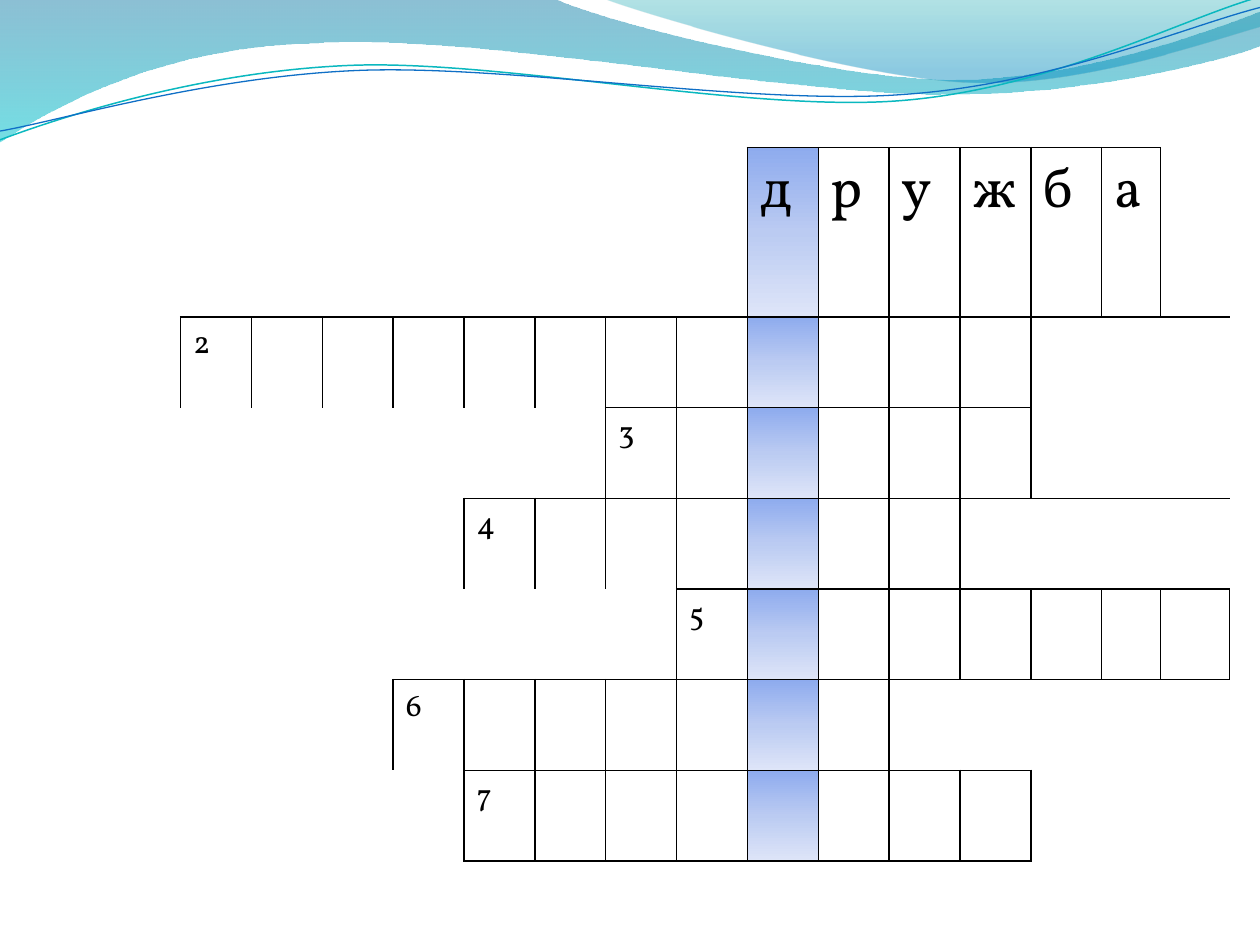
import math
from dataclasses import dataclass
from typing import Any

import lxml.etree
import pptx
import pptx.dml.color
import pptx.oxml
import pptx.oxml.ns
import pptx.util

COLORS = {
    "black": "000000", "teal": "0AB8BF", "blue": "0F6FC6",
    "key_top": "8EABEE", "key_mid": "BBCBF2", "key_bottom": "DEE5F8",
    "wave_top": "0074A1", "wave_bottom": "00C6CF",
    "crest_top": "00A1A9", "crest_bottom": "008BBF",
}
FONT = "Vollkorn"
LINE_FACTOR = 1.395
NO_GRID_STYLE = "{2D5ABB26-0587-4C30-8999-92F81FD0307C}"
KEY_COL = 9
COL_WIDTHS = [80.7] + [40.5] * 13 + [33.6, 39.6]
LAST_COL = len(COL_WIDTHS) - 1
ROW_HEIGHT = 50.6
CELL_TOP = 3.6

Point = tuple[float, float]
qn = pptx.oxml.ns.qn


@dataclass
class Stop:
    position: int
    color: str
    alpha: int = 100


@dataclass
class Word:
    first: int
    last: int
    text: str
    size: int = 18
    full_height: float = 51.85
    line_above_right: bool = False
    right_rows: int = 1


@dataclass
class Wave:
    """An outline whose pieces are lines (one point) or Bezier curves (three)."""
    start: Point
    pieces: list[tuple[Point, ...]]
    stops: tuple[Stop, ...] = ()
    line: str = ""
    width: float = 0
    pivot: Point = (0, 0)
    rotation: float = 0


KEY_STOPS = (Stop(0, "key_top"), Stop(50, "key_mid"), Stop(100, "key_bottom"))

WORDS = [
    Word(9, 14, "дружба", 32, 96.6),
    Word(1, 12, "2", line_above_right=True, right_rows=2),
    Word(7, 12, "3", right_rows=0),
    Word(5, 11, "4", line_above_right=True),
    Word(8, 15, "5"),
    Word(4, 10, "6", line_above_right=True),
    Word(5, 12, "7"),
]

WAVES = [
    Wave((0, 0),
         [((316.8, -0.7),),
          ((342.7, 12.2), (478.1, 45.4), (545.8, 45.4)),
          ((614.2, 45.4), (689.8, 18.7), (720, 6.5)),
          ((720.7, 25.9),),
          ((707.8, 31.7), (626.4, 54.7), (537.1, 54)),
          ((447.8, 54), (275, 20.2), (185, 24.5)),
          ((92.9, 25.9), (33.1, 59.8), (-0.7, 81.4))],
         (Stop(0, "wave_top", 45), Stop(100, "wave_bottom", 55))),
    Wave((344.9, -0.7),
         [((366.5, 7.9), (491, 44.6), (553.7, 46.8)),
          ((616.3, 49.7), (691.9, 23), (720, 15.1)),
          ((720, 0),)],
         (Stop(0, "crest_top", 30), Stop(80, "crest_bottom", 45))),
    Wave((0, 79.9),
         [((34.6, 67), (113.8, 41), (199.4, 37.4)),
          ((284.4, 33.8), (427, 64.1), (513.4, 57.6)),
          ((599.8, 51.1), (675.4, 10.8), (718.6, -1.4))],
         line="teal", width=0.85, pivot=(359.3, 41.4), rotation=-2.7),
    Wave((0, 74.9),
         [((33.8, 69.1), (118.1, 43.9), (203.8, 40.3)),
          ((290.2, 36.7), (429.8, 60.5), (516.2, 54)),
          ((601.9, 48.2), (677.5, 15.1), (720, 4.3))],
         line="blue", width=0.75, pivot=(359.6, 42.5), rotation=-2.7),
]


def rgb(name: str) -> pptx.dml.color.RGBColor:
    return pptx.dml.color.RGBColor.from_string(COLORS[name])


def apply_gradient(fill: Any, parent: Any, stops: tuple[Stop, ...]) -> None:
    """Fill top to bottom with the stops, alpha included."""
    fill.gradient()
    grad = parent.find(qn("a:gradFill"))
    for child in list(grad):
        grad.remove(child)
    gs_list = lxml.etree.SubElement(grad, qn("a:gsLst"))
    for stop in stops:
        gs = lxml.etree.SubElement(gs_list, qn("a:gs"), pos=str(stop.position * 1000))
        clr = lxml.etree.SubElement(gs, qn("a:srgbClr"), val=COLORS[stop.color])
        if stop.alpha < 100:
            lxml.etree.SubElement(clr, qn("a:alpha"), val=str(stop.alpha * 1000))
    lxml.etree.SubElement(grad, qn("a:lin"), ang="5400000", scaled="0")


def unrotate(point: Point, wave: Wave) -> Point:
    """Turn a point back, so that the shape's own rotation restores it."""
    angle = math.radians(-wave.rotation)
    dx, dy = point[0] - wave.pivot[0], point[1] - wave.pivot[1]
    x = wave.pivot[0] + dx * math.cos(angle) - dy * math.sin(angle)
    y = wave.pivot[1] + dx * math.sin(angle) + dy * math.cos(angle)
    return pptx.util.Pt(x), pptx.util.Pt(y)


def bend_segments(sp: Any, wave: Wave) -> None:
    """Join each three straight segments of a curved piece into one Bezier."""
    segments = iter(list(sp._element.iter(qn("a:lnTo"))))
    for piece in wave.pieces:
        group = [next(segments) for _ in piece]
        if len(group) == 3:
            curve = lxml.etree.Element(qn("a:cubicBezTo"))
            group[0].addprevious(curve)
            for segment in group:
                curve.append(segment[0])
                segment.getparent().remove(segment)


def draw_wave(s: Any, wave: Wave) -> None:
    points = [wave.start] + [point for piece in wave.pieces for point in piece]
    emu = [unrotate(point, wave) for point in points]
    builder = s.shapes.build_freeform(*emu[0], scale=1.0)
    builder.add_line_segments(emu[1:], close=bool(wave.stops))
    sp = builder.convert_to_shape()
    bend_segments(sp, wave)
    sp.rotation = wave.rotation
    sp.shadow.inherit = False
    if wave.stops:
        apply_gradient(sp.fill, sp._element.spPr, wave.stops)
        sp.line.fill.background()
    else:
        sp.fill.background()
        sp.line.color.rgb = rgb(wave.line)
        sp.line.width = pptx.util.Pt(wave.width)


def set_borders(cell: Any, sides: str) -> None:
    """Draw the sides named by letters out of LRTB and clear the others."""
    tc_pr = cell._tc.get_or_add_tcPr()
    for i, side in enumerate("LRTB"):
        ln = pptx.oxml.parse_xml(f'<a:ln{side} {pptx.oxml.ns.nsdecls("a")} w="12700"/>')
        if side in sides:
            fill = lxml.etree.SubElement(ln, qn("a:solidFill"))
            lxml.etree.SubElement(fill, qn("a:srgbClr"), val=COLORS["black"])
        else:
            lxml.etree.SubElement(ln, qn("a:noFill"))
        tc_pr.insert(i, ln)


def write_letter(cell: Any, letter: str, word: Word) -> None:
    cell.margin_bottom = pptx.util.Pt(word.full_height - CELL_TOP - word.size * LINE_FACTOR)
    r = cell.text_frame.paragraphs[0].add_run()
    r.text = letter
    for name, value in {"name": FONT, "size": pptx.util.Pt(word.size)}.items():
        setattr(r.font, name, value)
    r.font.color.rgb = rgb("black")


def draw_row(table: Any, row: int, word: Word) -> None:
    above = "T" if word.line_above_right else ""
    for col in range(LAST_COL + 1):
        cell = table.cell(row, col)
        if word.first <= col <= word.last:
            set_borders(cell, "LRTB")
        elif col < word.first:
            set_borders(cell, "R" if col in (0, word.first - 1) else "")
        else:
            set_borders(cell, above + ("L" if col == word.last + 1 else ""))
        if col == KEY_COL:
            apply_gradient(cell.fill, cell._tc.tcPr, KEY_STOPS)
        else:
            cell.fill.background()
    for col, letter in enumerate(word.text, word.first):
        write_letter(table.cell(row, col), letter, word)


def merge_blanks(table: Any, row: int, word: Word) -> None:
    if word.first > 1:
        table.cell(row, 0).merge(table.cell(row, word.first - 1))
    if word.right_rows and word.last < LAST_COL - 1:
        table.cell(row, word.last + 1).merge(table.cell(row + word.right_rows - 1, LAST_COL))


def draw_crossword(s: Any) -> None:
    frame = s.shapes.add_table(len(WORDS), len(COL_WIDTHS), pptx.util.Pt(22.6), pptx.util.Pt(84.4),
                               pptx.util.Pt(sum(COL_WIDTHS)), pptx.util.Pt(ROW_HEIGHT * len(WORDS)))
    table = frame.table
    table.first_row = table.horz_banding = False
    table._tbl.tblPr.find(qn("a:tableStyleId")).text = NO_GRID_STYLE
    for column, width in zip(table.columns, COL_WIDTHS):
        column.width = pptx.util.Pt(width)
    for table_row in table.rows:
        table_row.height = pptx.util.Pt(ROW_HEIGHT)
    for draw in (draw_row, merge_blanks):
        for row, word in enumerate(WORDS):
            draw(table, row, word)


def main() -> None:
    prs = pptx.Presentation()
    prs.slide_width, prs.slide_height = pptx.util.Pt(720), pptx.util.Pt(540)
    s = prs.slides.add_slide(prs.slide_layouts[6])
    for wave in WAVES:
        draw_wave(s, wave)
    draw_crossword(s)
    prs.save("out.pptx")


if __name__ == "__main__":
    main()
